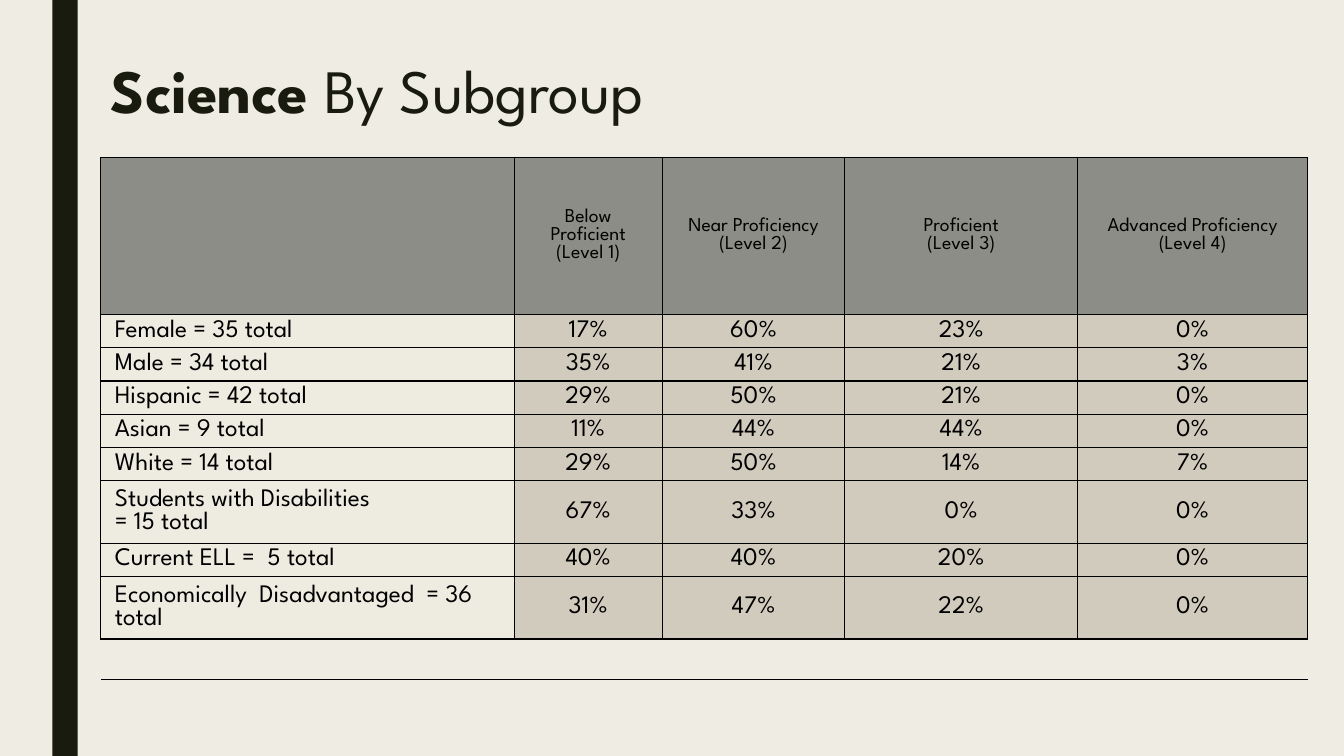
from pptx import Presentation
from pptx.dml.color import RGBColor
from pptx.enum.shapes import MSO_SHAPE
from pptx.enum.text import MSO_ANCHOR, PP_ALIGN
from pptx.oxml import parse_xml
from pptx.oxml.ns import nsdecls
from pptx.util import Inches, Pt

FONT = "League Spartan"
CREAM = RGBColor(0xEF, 0xED, 0xE3)
DARK = RGBColor(0x19, 0x1B, 0x0E)
BLACK = RGBColor(0, 0, 0)
GRAY = RGBColor(0x8C, 0x8D, 0x86)
TAN = RGBColor(0xD1, 0xCB, 0xBE)
IVORY = RGBColor(0xEE, 0xEC, 0xE1)

HEADERS = ["", "Below Proficient\n(Level 1)", "Near Proficiency\n(Level 2)",
           "Proficient\n(Level 3)", "Advanced Proficiency\n(Level 4)"]
GROUPS = [
    ("Female = 35 total", 17, 60, 23, 0),
    ("Male = 34 total", 35, 41, 21, 3),
    ("Hispanic = 42 total", 29, 50, 21, 0),
    ("Asian = 9 total", 11, 44, 44, 0),
    ("White = 14 total", 29, 50, 14, 7),
    ("Students with Disabilities\n= 15 total", 67, 33, 0, 0),
    ("Current ELL =  5 total", 40, 40, 20, 0),
    ("Economically  Disadvantaged  = 36 total", 31, 47, 22, 0),
]
COLS = [4.1, 1.47, 1.81, 2.31, 2.28]
ONE, TWO, FOOT = 0.33, 0.56, 0.4
ROWS = [1.56] + [ONE] * 5 + [TWO, ONE, TWO] + [FOOT] * 2


def add_run(p, text, size, color, bold=False):
    r = p.add_run()
    r.text = text
    r.font.name, r.font.size, r.font.bold = FONT, Pt(size), bold
    r.font.color.rgb = color
    # The paragraph mark takes the same font, so rows keep their height
    for mark in p._p.findall("{*}endParaRPr"):
        p._p.remove(mark)
    p._p.append(parse_xml(
        f'<a:endParaRPr {nsdecls("a")} sz="{size * 100}">'
        f'<a:latin typeface="{FONT}"/></a:endParaRPr>'))


def set_borders(cell, sides):
    # Borders go before the fill in the cell properties
    tcPr = cell._tc.get_or_add_tcPr()
    for i, side in enumerate(["L", "R", "T", "B"]):
        line = ('<a:solidFill><a:srgbClr val="000000"/></a:solidFill>'
                if side in sides else "<a:noFill/>")
        tcPr.insert(i, parse_xml(
            f'<a:ln{side} {nsdecls("a")} w="12700">{line}</a:ln{side}>'))


prs = Presentation()
prs.slide_width, prs.slide_height = Inches(13.33), Inches(7.5)
s = prs.slides.add_slide(prs.slide_layouts[6])
s.background.fill.solid()
s.background.fill.fore_color.rgb = CREAM

# Side bar
bar = s.shapes.add_shape(MSO_SHAPE.RECTANGLE, Inches(0.52), 0,
                         Inches(0.25), prs.slide_height)
bar.shadow.inherit = False
bar.fill.solid()
bar.fill.fore_color.rgb = DARK
bar.line.fill.background()

# Title
tf = s.shapes.add_textbox(Inches(1), Inches(0.55),
                          Inches(10.5), Inches(1.01)).text_frame
tf.word_wrap = True
tf.vertical_anchor = MSO_ANCHOR.MIDDLE
tf.margin_bottom = Inches(0.29)
p = tf.paragraphs[0]
p.line_spacing = 0.89
add_run(p, "Science", 44, DARK, True)
add_run(p, " By Subgroup", 44, DARK)

# Table: header, subgroups, two empty closing rows
tbl = s.shapes.add_table(len(ROWS), len(COLS), Inches(1), Inches(1.56),
                         Inches(sum(COLS)), Inches(sum(ROWS))).table
tbl.first_row = tbl.horz_banding = False
for col, w in zip(tbl.columns, COLS):
    col.width = Inches(w)
for row, h in zip(tbl.rows, ROWS):
    row.height = Inches(h)

texts = [HEADERS] + [[name] + [f"{v}%" for v in vals] for name, *vals in GROUPS]
for i, row in enumerate(texts):
    for j, text in enumerate(row):
        cell = tbl.cell(i, j)
        cell.vertical_anchor = MSO_ANCHOR.MIDDLE
        cell.margin_left = cell.margin_right = Inches(0.14)
        cell.margin_top = cell.margin_bottom = Inches(0.01)
        cell.fill.solid()
        cell.fill.fore_color.rgb = GRAY if i == 0 else TAN if j else IVORY
        set_borders(cell, "LRTB")
        for k, part in enumerate(text.split("\n") if text else []):
            tf = cell.text_frame
            p = tf.add_paragraph() if k else tf.paragraphs[0]
            p.alignment = PP_ALIGN.CENTER if i == 0 or j else PP_ALIGN.LEFT
            add_run(p, part, 18 if i else 14, BLACK)

# The first closing row carries the rule below the table
for i, sides in enumerate(["TB", "T"], start=len(texts)):
    for j in range(len(COLS)):
        cell = tbl.cell(i, j)
        cell.fill.background()
        set_borders(cell, sides)

prs.save("out.pptx")
